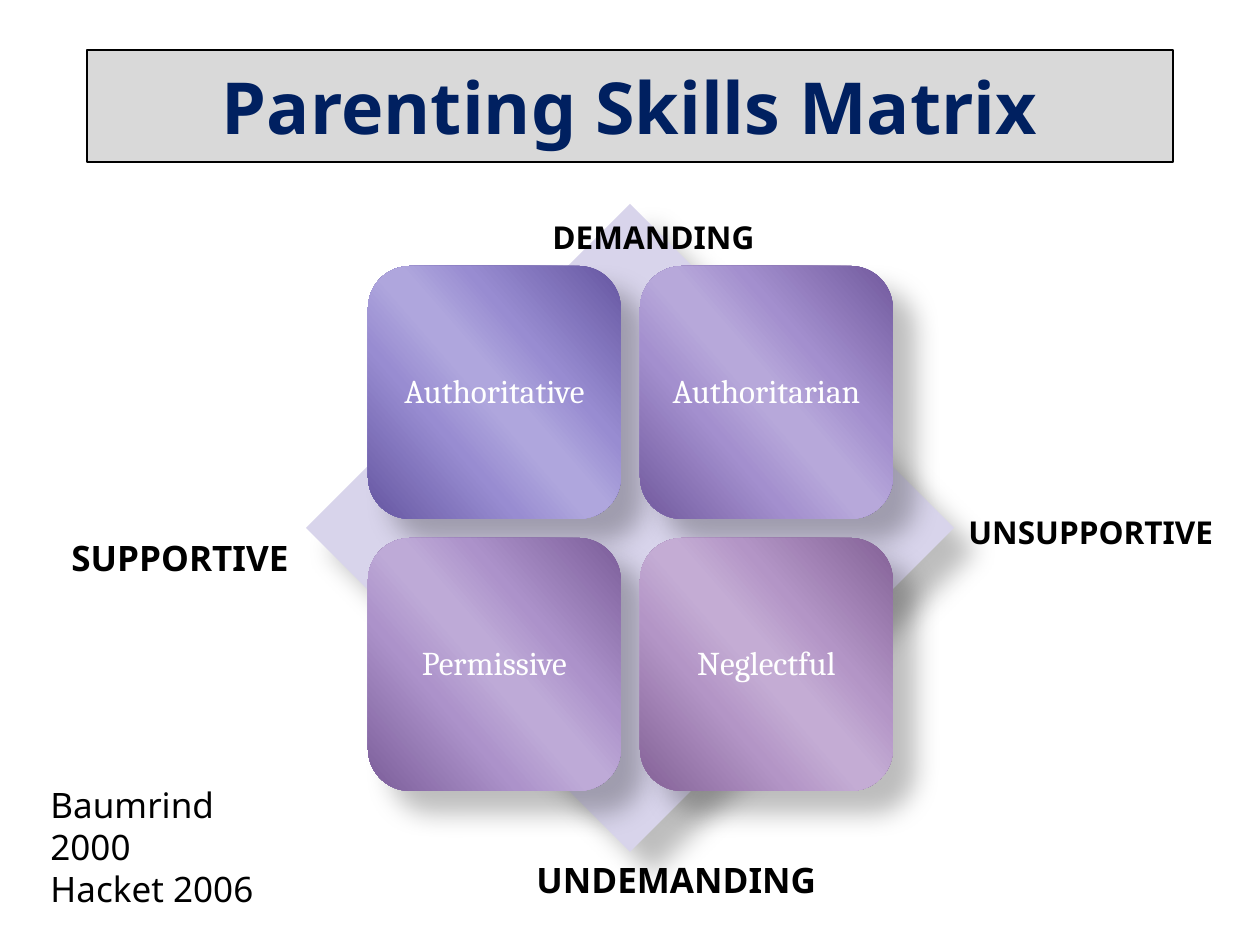
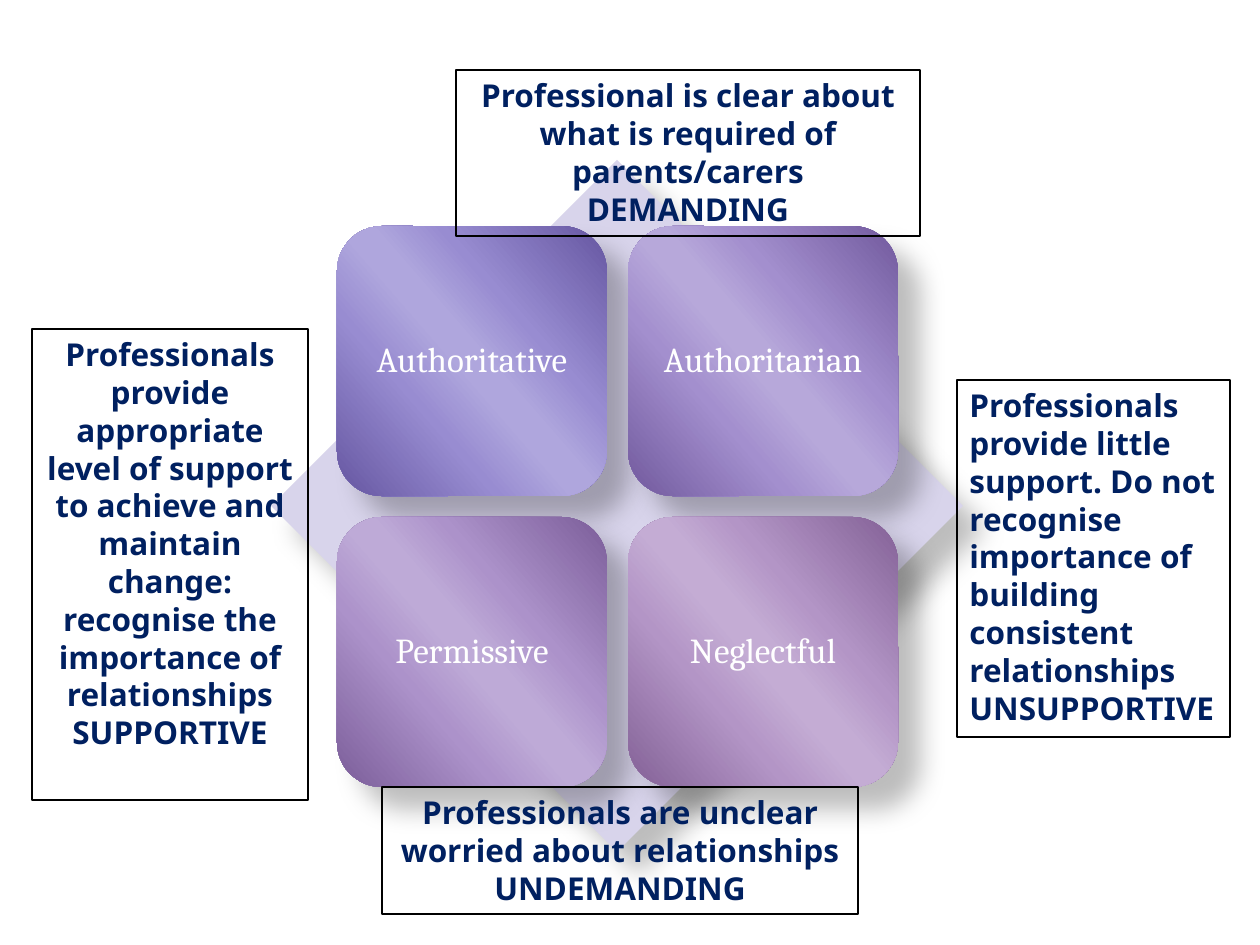
from dataclasses import dataclass
from itertools import product
from lxml.etree import SubElement
from pptx import Presentation
from pptx.dml.color import RGBColor as Rgb
from pptx.enum.shapes import MSO_SHAPE as Kind
from pptx.enum.text import MSO_ANCHOR as Anchor, MSO_AUTO_SIZE as Fit, PP_ALIGN as Align
from pptx.oxml.ns import qn
from pptx.util import Emu, Pt

SCALE = 914400 / 126
WIDE, HIGH = 1260, 945


@dataclass(frozen=True)
class Theme:
    navy: str = "002060"
    black: str = "000000"
    white: str = "FFFFFF"
    band: str = "D9D9D9"
    diamond: str = "D8D4EB"
    sans: str = "Noto Sans"
    serif: str = "Cambria"
    title: int = 41
    large: int = 20
    body: int = 18
    rule: float = 0.75


THEME = Theme()
STOPS = (0, 33, 47, 53, 68, 100)
# Each tile runs dark, mid, light and back again.
STYLES = [
    ("Authoritative", "6556A1", "988CD1", "AFA6DD"),
    ("Authoritarian", "71599D", "A38FCE", "B7A8DA"),
    ("Permissive", "7B5D99", "AC92CA", "BEAAD7"),
    ("Neglectful", "836196", "B395C6", "C4ACD4"),
]


def px(*sizes):
    return [Emu(round(size * SCALE)) for size in sizes]


def write(frame, lines, size, color, face=THEME.sans, bold=True, align=Align.LEFT):
    look = {"size": Pt(size), "name": face, "bold": bold}
    for i, line in enumerate(lines):
        para = frame.paragraphs[0] if i == 0 else frame.add_paragraph()
        para.alignment = align
        run = para.add_run()
        run.text = line
        for key, value in look.items():
            setattr(run.font, key, value)
        run.font.color.rgb = Rgb.from_string(color)


def outline(shape):
    shape.line.color.rgb = Rgb.from_string(THEME.black)
    shape.line.width = Pt(THEME.rule)


def paint(shape, color):
    shape.fill.solid()
    shape.fill.fore_color.rgb = Rgb.from_string(color)


def blend(shape, colors):
    """Fill with a diagonal gradient, one colour per stop."""
    shape.fill.gradient()
    shape.fill.gradient_angle = 221
    stops = shape.element.spPr.find(".//" + qn("a:gsLst"))
    for old in list(stops):
        stops.remove(old)
    for place, color in zip(STOPS, colors):
        stop = SubElement(stops, qn("a:gs"), pos=str(place * 1000))
        SubElement(stop, qn("a:srgbClr"), val=color)


def shade(shape):
    """Drop a soft shadow down and to the right."""
    shape.shadow.inherit = False
    effect = shape.element.spPr.find(qn("a:effectLst"))
    drop = SubElement(effect, qn("a:outerShdw"), blurRad=str(Pt(15)), dist=str(Pt(18)),
                      dir=str(45 * 60000), algn="tl", rotWithShape="0")
    color = SubElement(drop, qn("a:srgbClr"), val=THEME.black)
    SubElement(color, qn("a:alpha"), val="26000")


def matrix(slide, left, top, side, size):
    """Four tiles over a diamond that fills a square box."""
    group = slide.shapes.add_group_shape()

    def part(kind, x, y, edge):
        shape = group.shapes.add_shape(kind, *px(x, y, edge, edge))
        shape.line.fill.background()
        shade(shape)
        return shape

    paint(part(Kind.DIAMOND, left, top, side), THEME.diamond)
    inset, tile, pitch = (round(side * part) for part in (0.095, 0.39, 0.42))
    for (row, col), (name, dark, mid, light) in zip(product(range(2), repeat=2), STYLES):
        shape = part(Kind.ROUNDED_RECTANGLE, left + inset + col * pitch,
                     top + inset + row * pitch, tile)
        blend(shape, (dark, mid, light, light, mid, dark))
        frame = shape.text_frame
        frame.word_wrap = True
        frame.vertical_anchor = Anchor.MIDDLE
        for edge in ("left", "top", "right", "bottom"):
            setattr(frame, "margin_" + edge, px(10)[0])
        write(frame, [name], size, THEME.white, THEME.serif, False, Align.CENTER)
        frame.paragraphs[0].line_spacing = 0.9


def label(slide, box, lines, size=THEME.body, color=THEME.black, wrap=True, **look):
    shape = slide.shapes.add_textbox(*px(*box))
    shape.text_frame.word_wrap = wrap
    write(shape.text_frame, lines, size, color, **look)
    return shape


def note(slide, box, lines, align=Align.CENTER):
    outline(label(slide, box, lines, color=THEME.navy, align=align))


def head(slide, box, text):
    title = slide.shapes.title
    title.left, title.top, title.width, title.height = px(*box)
    paint(title, THEME.band)
    outline(title)
    frame = title.text_frame
    frame.auto_size = Fit.NONE
    frame.vertical_anchor = Anchor.MIDDLE
    write(frame, [text], THEME.title, THEME.navy, align=Align.CENTER)


def skills(deck):
    slide = deck.slides.add_slide(deck.slide_layouts[5])
    head(slide, (87, 50, 1086, 112), "Parenting Skills Matrix")
    matrix(slide, 306, 204, 648, 19)
    label(slide, (540, 212, 236, 50), ["DEMANDING"])
    label(slide, (59, 530, 278, 55), ["SUPPORTIVE"], THEME.large)
    label(slide, (956, 507, 285, 50), ["UNSUPPORTIVE"], wrap=False)
    label(slide, (524, 852, 306, 55), ["UNDEMANDING"], THEME.large, wrap=False)
    label(slide, (38, 777, 273, 140), ["Baumrind 2000", "Hacket 2006"],
          THEME.large, bold=False)


def support(deck):
    slide = deck.slides.add_slide(deck.slide_layouts[6])
    matrix(slide, 271, 160, 692, 20)
    note(slide, (456, 70, 464, 166),
         ["Professional is clear about what is required of parents/carers DEMANDING"])
    note(slide, (382, 787, 476, 127),
         ["Professionals are unclear worried about relationships", "UNDEMANDING"])
    note(slide, (32, 329, 276, 471),
         ["Professionals provide appropriate level of support to achieve and maintain "
          "change: recognise the importance of relationships", "SUPPORTIVE"])
    note(slide, (957, 380, 273, 357),
         ["Professionals provide little support. Do not recognise importance of "
          "building consistent relationships", "UNSUPPORTIVE"], Align.LEFT)


def main():
    deck = Presentation()
    deck.slide_width, deck.slide_height = px(WIDE, HIGH)
    skills(deck)
    support(deck)
    deck.save("out.pptx")


if __name__ == "__main__":
    main()
